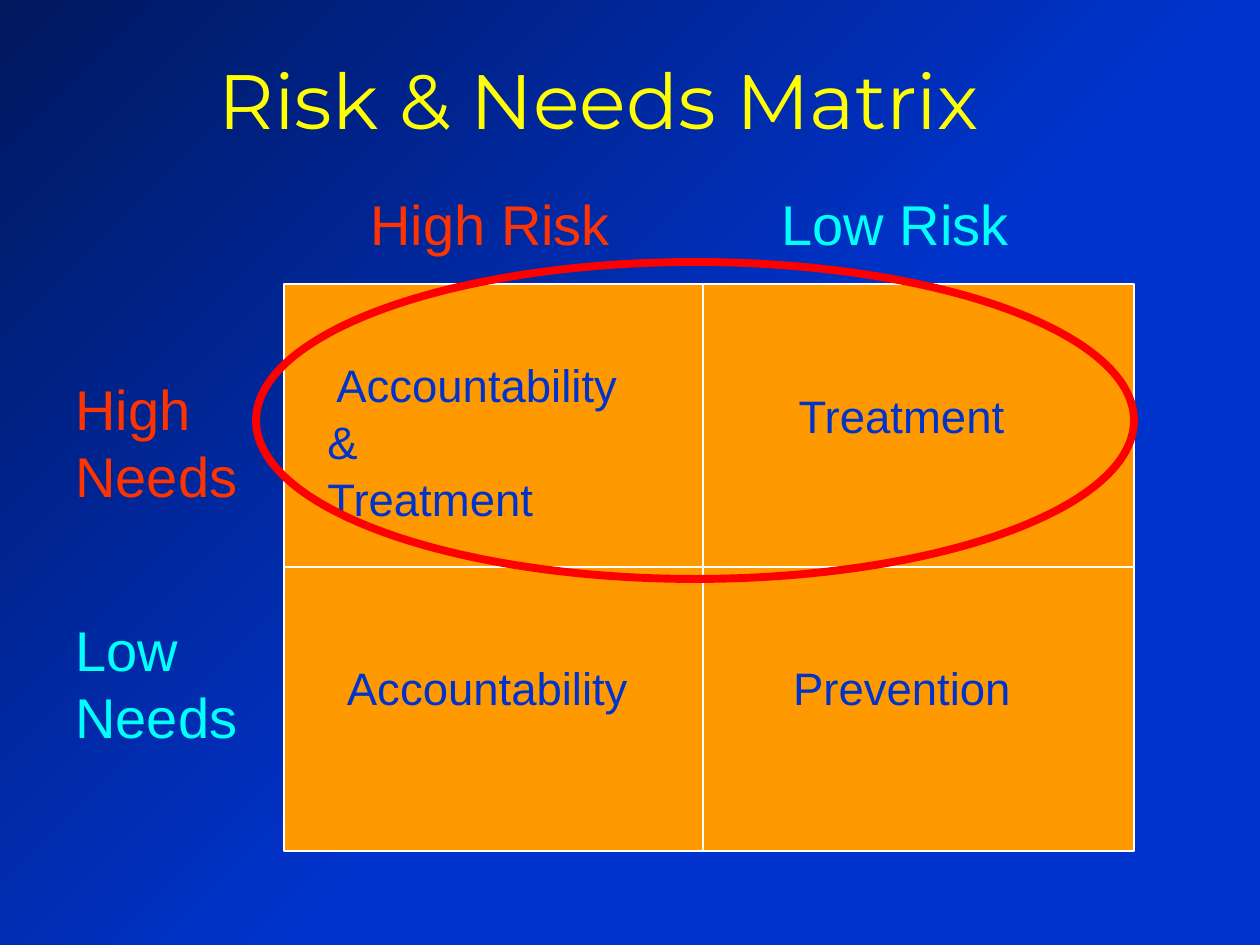
from lxml import etree
from pptx import Presentation
from pptx.dml.color import RGBColor
from pptx.enum.shapes import MSO_CONNECTOR, MSO_SHAPE
from pptx.enum.text import MSO_ANCHOR, PP_ALIGN
from pptx.oxml.ns import qn
from pptx.util import Emu, Pt

THEME = {
    "blue": "0033CC", "navy": "00185E", "title": "FFFF00", "high": "FF3300",
    "low": "00FFFF", "cell": "FF9900", "grid": "FFFFFF", "ring": "FF0000",
    "title_font": "Montserrat", "body_font": "Arial",
    "title_size": 44, "header_size": 32, "cell_size": 26,
    "grid_width": 0.75, "ring_width": 4.5,
}

TITLE = ("Risk & Needs Matrix", (-10, 47, 1218, 104))
# lines, colour, (left, top, width, height)
HEADERS = [
    (["High Risk"], "high", (358, 183, 284, 80)),
    (["Low Risk"], "low", (769, 183, 271, 80)),
    (["High", "Needs"], "high", (63, 368, 193, 147)),
    (["Low", "Needs"], "low", (63, 609, 193, 147)),
]
# text, centre x, centre y, width
CELLS = [
    ("Treatment", 901, 415, 233),
    ("Accountability", 487, 687, 309),
    ("Prevention", 902, 687, 246),
]
CELL_HEIGHT = 64
COMBINED = (["Accountability", "&", "Treatment"], (315, 349, 318, 177))
FIRST_LINE_INDENT = 9
GRID = (284, 284, 850, 567)
COLUMN_SPLIT = 703
RING = (256, 262, 878, 317)


def px(length):
    return Emu(length * 914400 // 126)


def box(frame):
    return [px(length) for length in frame]


def color(key):
    return RGBColor.from_string(THEME[key])


def style_line(line, key):
    line.color.rgb = color(key)
    line.width = Pt(THEME[f"{key}_width"])


def style_text(frame, lines, kind, key, font="body_font"):
    frame.text = "\n".join(lines)
    for paragraph in frame.paragraphs:
        for run in paragraph.runs:
            run.font.name = THEME[font]
            run.font.size = Pt(THEME[f"{kind}_size"])
            run.font.color.rgb = color(key)


def add_label(slide, lines, kind, key, position):
    frame = slide.shapes.add_textbox(*box(position)).text_frame
    frame.word_wrap = False
    style_text(frame, lines, kind, key)
    return frame


def paint_background(slide):
    """Radial gradient spreading from the bottom right corner."""
    fill = slide.background.fill
    fill.gradient()
    for stop, position, key in zip(fill.gradient_stops, (0.44, 1), ("blue", "navy")):
        stop.position = position
        stop.color.rgb = color(key)
    gradient = slide.background._cSld.find(".//" + qn("a:gradFill"))
    for linear in gradient.findall(qn("a:lin")):
        gradient.remove(linear)
    radial = etree.Element(qn("a:path"), {"path": "circle"})
    etree.SubElement(radial, qn("a:fillToRect"), {"l": "100000", "t": "100000"})
    gradient.find(qn("a:gsLst")).addnext(radial)


def add_grid(slide):
    left, top, width, height = GRID
    right, bottom, middle = left + width, top + height, top + height // 2
    group = slide.shapes.add_group_shape()
    square = group.shapes.add_shape(MSO_SHAPE.RECTANGLE, *box(GRID))
    square.shadow.inherit = False
    square.fill.solid()
    square.fill.fore_color.rgb = color("cell")
    style_line(square.line, "grid")
    for ends in ((COLUMN_SPLIT, top, COLUMN_SPLIT, bottom), (left, middle, right, middle)):
        divider = group.shapes.add_connector(MSO_CONNECTOR.STRAIGHT, *box(ends))
        style_line(divider.line, "grid")
        etree.SubElement(divider._element.spPr, qn("a:effectLst"))


def main():
    deck = Presentation()
    deck.slide_width, deck.slide_height = px(1260), px(945)
    slide = deck.slides.add_slide(deck.slide_layouts[5])
    paint_background(slide)

    text, position = TITLE
    title = slide.shapes.title
    title.left, title.top, title.width, title.height = box(position)
    style_text(title.text_frame, [text], "title", "title", "title_font")
    title.text_frame.vertical_anchor = MSO_ANCHOR.MIDDLE
    title.text_frame.paragraphs[0].alignment = PP_ALIGN.CENTER

    add_grid(slide)
    for lines, key, position in HEADERS:
        add_label(slide, lines, "header", key, position)

    for text, center_x, center_y, width in CELLS:
        position = (center_x - width // 2, center_y - CELL_HEIGHT // 2, width, CELL_HEIGHT)
        frame = add_label(slide, [text], "cell", "blue", position)
        frame.vertical_anchor = MSO_ANCHOR.MIDDLE
        frame.paragraphs[0].alignment = PP_ALIGN.CENTER

    lines, position = COMBINED
    frame = add_label(slide, lines, "cell", "blue", position)
    for paragraph in frame.paragraphs:
        paragraph.line_spacing = 1.04
    frame.paragraphs[0]._p.get_or_add_pPr().set("indent", str(px(FIRST_LINE_INDENT)))

    ring = slide.shapes.add_shape(MSO_SHAPE.OVAL, *box(RING))
    ring.shadow.inherit = False
    ring.fill.background()
    style_line(ring.line, "ring")

    deck.save("out.pptx")


if __name__ == "__main__":
    main()
